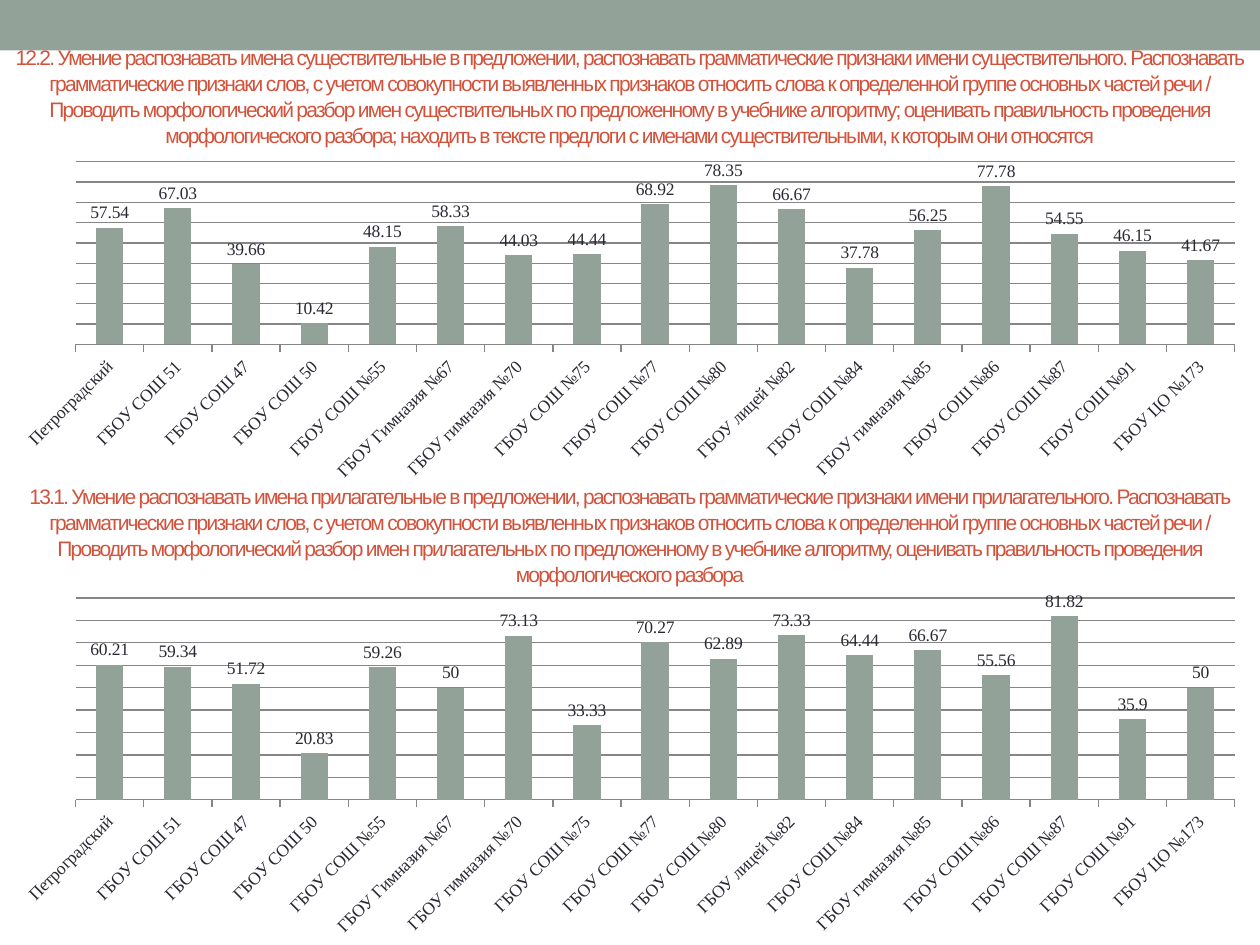
import pptx
import pptx.chart.data
import pptx.dml.color
import pptx.enum.chart
import pptx.enum.shapes
import pptx.enum.text
import pptx.oxml
import pptx.oxml.ns
import pptx.util

Pt = pptx.util.Pt
RGBColor = pptx.dml.color.RGBColor

SAGE = RGBColor(0x93, 0xA2, 0x99)
RED = RGBColor(0xD2, 0x53, 0x3C)
INK = RGBColor(0x29, 0x29, 0x34)
GRID = RGBColor(0x86, 0x86, 0x86)
SLIDE_W, SLIDE_H = 720, 540

SCHOOLS = [
    "Петроградский", "ГБОУ СОШ 51", "ГБОУ СОШ 47", "ГБОУ СОШ 50",
    "ГБОУ СОШ №55", "ГБОУ Гимназия №67", "ГБОУ гимназия №70",
    "ГБОУ СОШ №75", "ГБОУ СОШ №77", "ГБОУ СОШ №80", "ГБОУ лицей №82",
    "ГБОУ СОШ №84", "ГБОУ гимназия №85", "ГБОУ СОШ №86", "ГБОУ СОШ №87",
    "ГБОУ СОШ №91", "ГБОУ ЦО №173",
]
NOUN_SCORES = [57.54, 67.03, 39.66, 10.42, 48.15, 58.33, 44.03, 44.44, 68.92,
               78.35, 66.67, 37.78, 56.25, 77.78, 54.55, 46.15, 41.67]
ADJECTIVE_SCORES = [60.21, 59.34, 51.72, 20.83, 59.26, 50, 73.13, 33.33, 70.27,
                    62.89, 73.33, 64.44, 66.67, 55.56, 81.82, 35.9, 50]

COMMON_SKILL = (
    "Распознавать грамматические признаки слов, с учетом совокупности "
    "выявленных признаков относить слова к определенной группе основных "
    "частей речи / Проводить морфологический разбор имен "
)
NOUN_TITLE = (
    "12.2. Умение распознавать имена существительные в предложении, "
    "распознавать грамматические признаки имени существительного. "
    + COMMON_SKILL +
    "существительных по предложенному в учебнике алгоритму; оценивать "
    "правильность проведения морфологического разбора; находить в тексте "
    "предлоги с именами существительными, к которым они относятся"
)
ADJECTIVE_TITLE = (
    "13.1. Умение распознавать имена прилагательные в предложении, "
    "распознавать грамматические признаки имени прилагательного. "
    + COMMON_SKILL +
    "прилагательных по предложенному в учебнике алгоритму, оценивать "
    "правильность проведения морфологического разбора"
)


def add_band(slide, height):
    sp = slide.shapes.add_shape(
        pptx.enum.shapes.MSO_SHAPE.RECTANGLE, 0, 0, Pt(SLIDE_W), Pt(height))
    sp.shadow.inherit = False
    sp.fill.solid()
    sp.fill.fore_color.rgb = SAGE
    sp.line.fill.background()


def add_heading(slide, text, top, height):
    sp = slide.shapes.add_textbox(0, Pt(top), Pt(SLIDE_W), Pt(height))
    tf = sp.text_frame
    tf.word_wrap = True
    tf.vertical_anchor = pptx.enum.text.MSO_ANCHOR.MIDDLE
    p = tf.paragraphs[0]
    p.alignment = pptx.enum.text.PP_ALIGN.CENTER
    p.line_spacing = 1.03
    r = p.add_run()
    r.text = text
    r.font.size = Pt(12)
    r.font.name = "Arial"
    r.font.color.rgb = RED
    r.font._element.set("spc", "-100")


def style_line(line):
    line.color.rgb = GRID
    line.width = Pt(0.75)


def place_plot(chart, x, y, w, h):
    plot_area = chart._chartSpace.chart.plotArea
    for old in plot_area.findall(pptx.oxml.ns.qn("c:layout")):
        plot_area.remove(old)
    values = dict(layoutTarget="inner", xMode="edge", yMode="edge", x=x, y=y, w=w, h=h)
    items = "".join(f'<c:{tag} val="{val}"/>' for tag, val in values.items())
    plot_area.insert(0, pptx.oxml.parse_xml(
        f'<c:layout {pptx.oxml.ns.nsdecls("c")}>'
        f"<c:manualLayout>{items}</c:manualLayout></c:layout>"))


def add_score_chart(slide, scores, top, height, plot_share):
    data = pptx.chart.data.CategoryChartData()
    data.categories = SCHOOLS
    data.add_series("Series 1", scores)
    chart = slide.shapes.add_chart(
        pptx.enum.chart.XL_CHART_TYPE.COLUMN_CLUSTERED,
        0, Pt(top), Pt(SLIDE_W), Pt(height), data).chart
    chart.has_legend = False
    chart.has_title = False
    chart.font.size = Pt(10)
    chart.font.name = "Times New Roman"
    chart.font.color.rgb = INK

    plot = chart.plots[0]
    plot.gap_width = 150
    plot.vary_by_categories = False
    fill = plot.series[0].format.fill
    fill.solid()
    fill.fore_color.rgb = SAGE
    plot.has_data_labels = True
    plot.data_labels.show_value = True
    plot.data_labels.position = pptx.enum.chart.XL_LABEL_POSITION.OUTSIDE_END

    val = chart.value_axis
    val.minimum_scale, val.maximum_scale, val.major_unit = 0, 90, 10
    val.has_major_gridlines = True
    style_line(val.major_gridlines.format.line)
    val.visible = False

    cat = chart.category_axis
    cat.major_tick_mark = pptx.enum.chart.XL_TICK_MARK.OUTSIDE
    style_line(cat.format.line)
    cat.tick_labels.font.size = Pt(10)
    cat._element.txPr.bodyPr.set("rot", "-2700000")
    place_plot(chart, 0.06, 0.02, 0.92, plot_share)


def main():
    prs = pptx.Presentation()
    prs.slide_width, prs.slide_height = Pt(SLIDE_W), Pt(SLIDE_H)
    slide = prs.slides.add_slide(prs.slide_layouts[6])
    add_band(slide, 28.8)
    add_heading(slide, NOUN_TITLE, 26, 57)
    add_heading(slide, ADJECTIVE_TITLE, 278.6, 54)
    add_score_chart(slide, NOUN_SCORES, 88.6, 190, 0.55)
    add_score_chart(slide, ADJECTIVE_SCORES, 337.7, 202.3, 0.57)
    prs.save("out.pptx")


if __name__ == "__main__":
    main()
